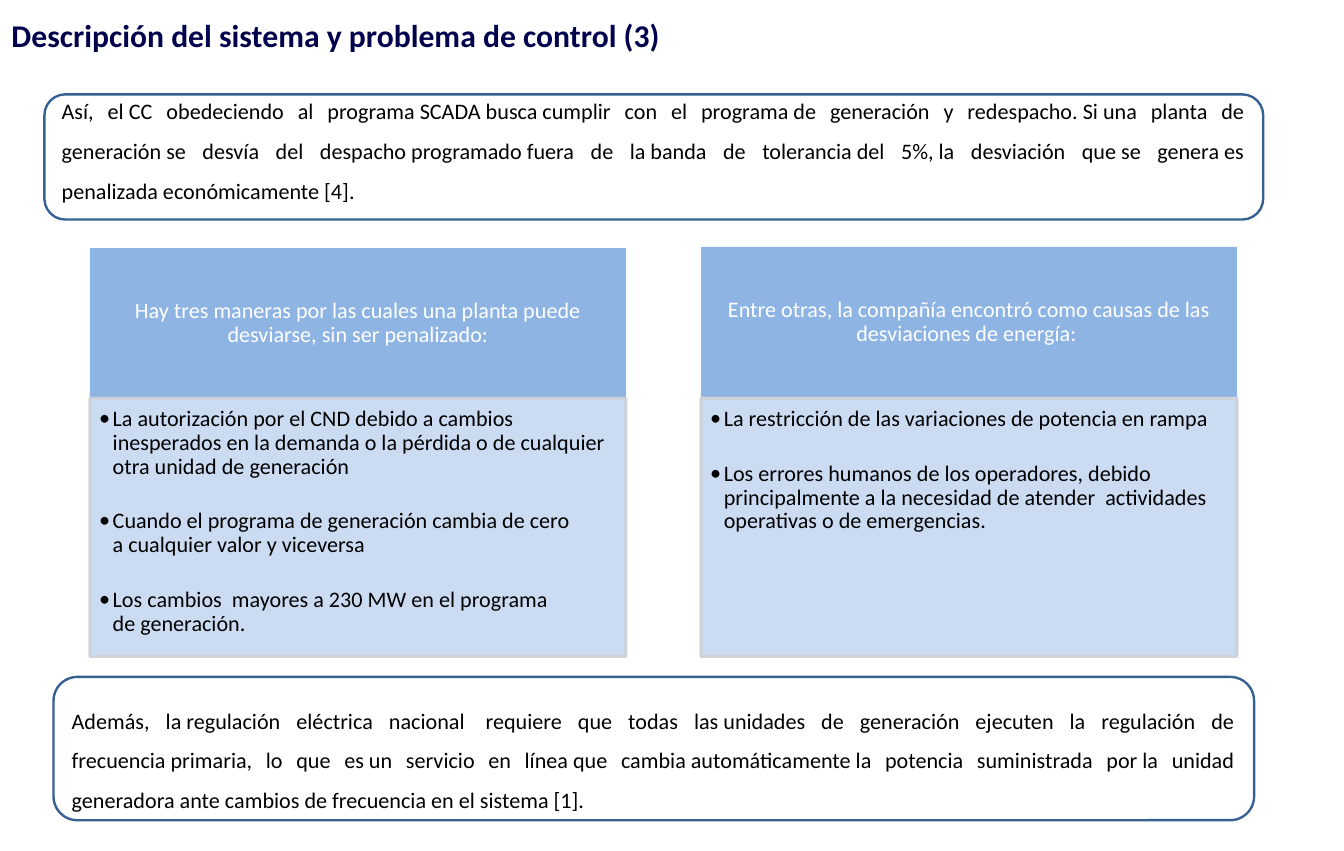
"""Build the slide on the control problem and its energy deviations."""
from lxml.etree import SubElement
from pptx import Presentation
from pptx.dml.color import RGBColor
from pptx.enum.shapes import MSO_SHAPE
from pptx.enum.text import MSO_ANCHOR, PP_ALIGN
from pptx.oxml.ns import qn
from pptx.util import Inches, Pt

COLORS = {"navy": "00004C", "edge": "376092", "head": "8EB4E3", "body": "C6D9F1",
          "rim": "CDD0D7", "white": "FFFFFF", "black": "000000"}
TIE, HARD = "~", chr(160)

NOTES = [
    (0.39, 0.83, 10.71, 1.1, MSO_ANCHOR.MIDDLE, 0.23,
     "Así, el~CC obedeciendo al programa~SCADA~busca~cumplir con el programa~de generación y redespacho.~Si~una planta de generación~se desvía del despacho~programado~fuera de la~banda de tolerancia~del 5%,~la desviación que~se genera~es penalizada~económicamente~[4]."),
    (0.47, 5.95, 10.55, 1.26, MSO_ANCHOR.BOTTOM, 0,
     "Además, la~regulación eléctrica nacional~ requiere que todas las~unidades de generación ejecuten la regulación de frecuencia~primaria, lo que es~un servicio en línea~que cambia~automáticamente~la potencia suministrada por~la unidad generadora~ante~cambios de frecuencia~en el sistema~[1]."),
]

CARDS = [
    (0.79, 2.18, "Hay~tres maneras por las cuales una planta~puede desviarse,~sin ser penalizado:",
     ["La autorización por el CND debido a~cambios inesperados en~la demanda o~la pérdida~o de cualquier otra~unidad de generación",
      "Cuando el~programa de generación~cambia de cero a~cualquier valor y viceversa",
      "Los cambios ~mayores a 230~MW~en el programa de~generación."]),
    (6.16, 2.17, "Entre otras, la compañía encontró~como~causas de las desviaciones~de energía: ",
     ["La restricción de~las variaciones~de potencia en~rampa",
      "Los errores humanos~de los operadores, debido principalmente~a la necesidad de atender  actividades operativas o de emergencias."]),
]


def add_box(kind, place, fill, line, width, anchor, insets, text):
    shape = slide.shapes.add_shape(kind, *[Inches(n) for n in place])
    shape.shadow.inherit = False
    if fill:
        shape.fill.solid()
        shape.fill.fore_color.rgb = RGBColor.from_string(COLORS[fill])
    else:
        shape.fill.background()
    if line:
        shape.line.color.rgb = RGBColor.from_string(COLORS[line])
        shape.line.width = Pt(width)
    else:
        shape.line.fill.background()
    frame = shape.text_frame
    frame.word_wrap = True
    frame.vertical_anchor = anchor
    (frame.margin_left, frame.margin_top,
     frame.margin_right, frame.margin_bottom) = [Inches(n) for n in insets]
    frame.text = text.replace(TIE, HARD)
    return shape


def style(para, align, space, color, size=14, bold=False):
    para.alignment = align
    para.line_spacing = space
    font = para.font
    font.name = "Calibri"
    font.size = Pt(size)
    font.bold = bold
    font.color.rgb = RGBColor.from_string(COLORS[color])


deck = Presentation()
deck.slide_width, deck.slide_height = Inches(11.81), Inches(7.48)
slide = deck.slides.add_slide(deck.slide_layouts[5])

title = slide.shapes.title
title.left, title.top = Inches(0), Inches(0)
title.width, title.height = Inches(8.56), Inches(0.61)
title.text_frame.text = "Descripción del sistema y problema de control (3)"
title.text_frame.vertical_anchor = MSO_ANCHOR.MIDDLE
style(title.text_frame.paragraphs[0], PP_ALIGN.LEFT, 1.0, "navy", 20, True)

for left, top, width, height, anchor, base, text in NOTES:
    note = add_box(MSO_SHAPE.ROUNDED_RECTANGLE, (left, top, width, height),
                   None, "edge", 1.5, anchor, (0.1, 0, 0.1, base), text)
    style(note.text_frame.paragraphs[0], PP_ALIGN.JUSTIFY, 1.5, "black")

for left, top, heading, points in CARDS:
    head = add_box(MSO_SHAPE.RECTANGLE, (left, top, 4.71, 1.32), "head", None, 0,
                   MSO_ANCHOR.MIDDLE, (0.11, 0.06, 0.11, 0.06), heading)
    style(head.text_frame.paragraphs[0], PP_ALIGN.CENTER, 0.9, "white")

    body = add_box(MSO_SHAPE.RECTANGLE, (left, 3.5, 4.71, 2.27), "body", "rim", 2,
                   MSO_ANCHOR.TOP, (0.08, 0.08, 0.11, 0.12), "\n".join(points))
    for color in body._element.spPr.iter(qn("a:srgbClr")):
        SubElement(color, qn("a:alpha"), val="90000")
    for index, para in enumerate(body.text_frame.paragraphs):
        props = para._p.get_or_add_pPr()
        props.set("marL", str(Inches(0.12)))
        props.set("indent", str(-Inches(0.12)))
        SubElement(props, qn("a:buFont"), typeface="Calibri")
        SubElement(props, qn("a:buChar"), char="•")
        if index:
            para.space_before = Pt(19.5)
        style(para, PP_ALIGN.LEFT, 0.9, "black")

deck.save("out.pptx")
